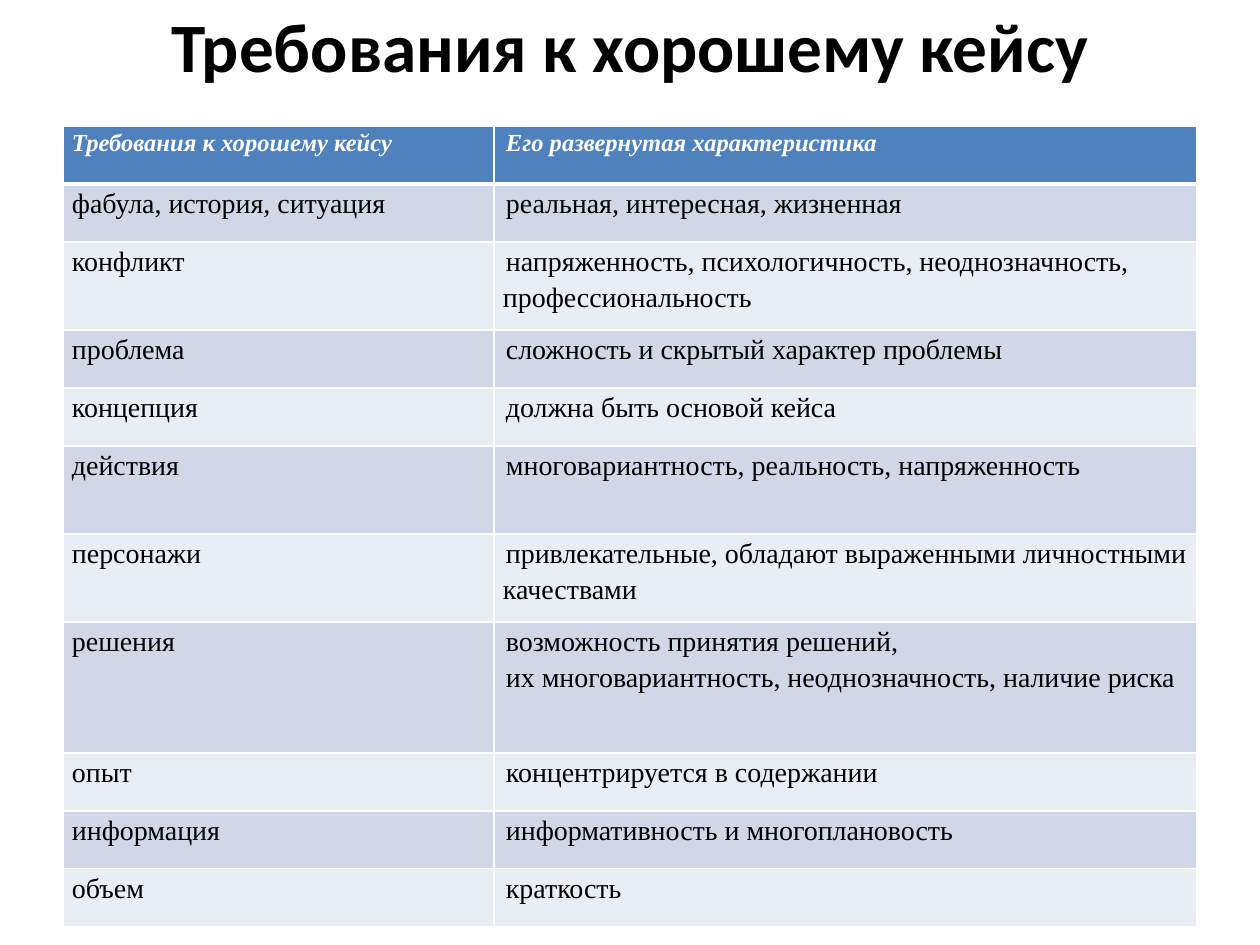
from lxml.etree import SubElement
from pptx import Presentation
from pptx.dml.color import RGBColor
from pptx.enum.text import MSO_ANCHOR, PP_ALIGN
from pptx.oxml.ns import qn
from pptx.util import Emu, Pt

EMU_PER_PX = 914400 / 126
COLORS = {
    "header": "4F81BD",
    "odd": "D0D8E8",
    "even": "E9EDF4",
    "white": "FFFFFF",
    "text": "000000",
}
TITLE = "Требования к хорошему кейсу"

# Row height, requirement, lines of its description
ROWS = [
    (58, TITLE, ["Его развернутая характеристика"]),
    (58, "фабула, история, ситуация", ["реальная, интересная, жизненная"]),
    (88, "конфликт", ["напряженность, психологичность, неоднозначность, профессиональность"]),
    (58, "проблема", ["сложность и скрытый характер проблемы"]),
    (58, "концепция", ["должна быть основой кейса"]),
    (88, "действия", ["многовариантность, реальность, напряженность"]),
    (88, "персонажи", ["привлекательные, обладают выраженными личностными качествами"]),
    (131, "решения", ["возможность принятия решений,",
                      "их многовариантность, неоднозначность, наличие риска"]),
    (58, "опыт", ["концентрируется в содержании"]),
    (58, "информация", ["информативность и многоплановость"]),
    (58, "объем", ["краткость"]),
]
COLUMN_WIDTHS = [431, 703]
FIRST_LINE_INDENT = 3


def px(length):
    return Emu(round(length * EMU_PER_PX))


def rgb(name):
    return RGBColor.from_string(COLORS[name])


def set_font(para, name, size, color, bold=False, italic=False):
    font = para.font
    font.name, font.size = name, Pt(size)
    font.bold, font.italic = bold, italic
    font.color.rgb = rgb(color)


def add_title(page):
    title = page.shapes.title
    title.left, title.top, title.width, title.height = px(63), px(0), px(1134), px(90)
    frame = title.text_frame
    frame.text = TITLE
    frame.vertical_anchor = MSO_ANCHOR.MIDDLE
    para = frame.paragraphs[0]
    para.alignment = PP_ALIGN.CENTER
    set_font(para, "Calibri", 39.6, "text", bold=True)


def set_borders(cell, bottom_width):
    properties = cell._tc.get_or_add_tcPr()
    for side, width in (("L", 1), ("R", 1), ("T", 1), ("B", bottom_width)):
        line = SubElement(properties, qn(f"a:ln{side}"), w=str(Pt(width)))
        fill = SubElement(line, qn("a:solidFill"))
        SubElement(fill, qn("a:srgbClr"), val=COLORS["white"])


def fill_cell(cell, lines, row, indent):
    is_header = row == 0
    set_borders(cell, 3 if is_header else 1)
    cell.fill.solid()
    cell.fill.fore_color.rgb = rgb("header" if is_header else "odd" if row % 2 else "even")
    cell.margin_left = cell.margin_right = px(9)
    cell.margin_top = cell.margin_bottom = 0
    cell.text_frame.text = "\n".join(lines)
    for para in cell.text_frame.paragraphs:
        para.line_spacing = 1.15
        if indent:
            para._p.get_or_add_pPr().set("indent", str(px(indent)))
        if is_header:
            set_font(para, "Times New Roman", 14, "white", bold=True, italic=True)
        else:
            set_font(para, "Times New Roman", 16, "text")


def add_requirements_table(page):
    height = sum(row_height for row_height, _, _ in ROWS)
    frame = page.shapes.add_table(len(ROWS), len(COLUMN_WIDTHS), px(63), px(126),
                                  px(sum(COLUMN_WIDTHS)), px(height))
    table = frame.table
    for column, width in zip(table.columns, COLUMN_WIDTHS):
        column.width = px(width)
    for row, (row_height, requirement, description) in enumerate(ROWS):
        table.rows[row].height = px(row_height)
        fill_cell(table.cell(row, 0), [requirement], row, 0)
        fill_cell(table.cell(row, 1), description, row, FIRST_LINE_INDENT)


def main():
    deck = Presentation()
    deck.slide_width, deck.slide_height = px(1260), px(945)
    page = deck.slides.add_slide(deck.slide_layouts[5])
    add_title(page)
    add_requirements_table(page)
    deck.save("out.pptx")


if __name__ == "__main__":
    main()
